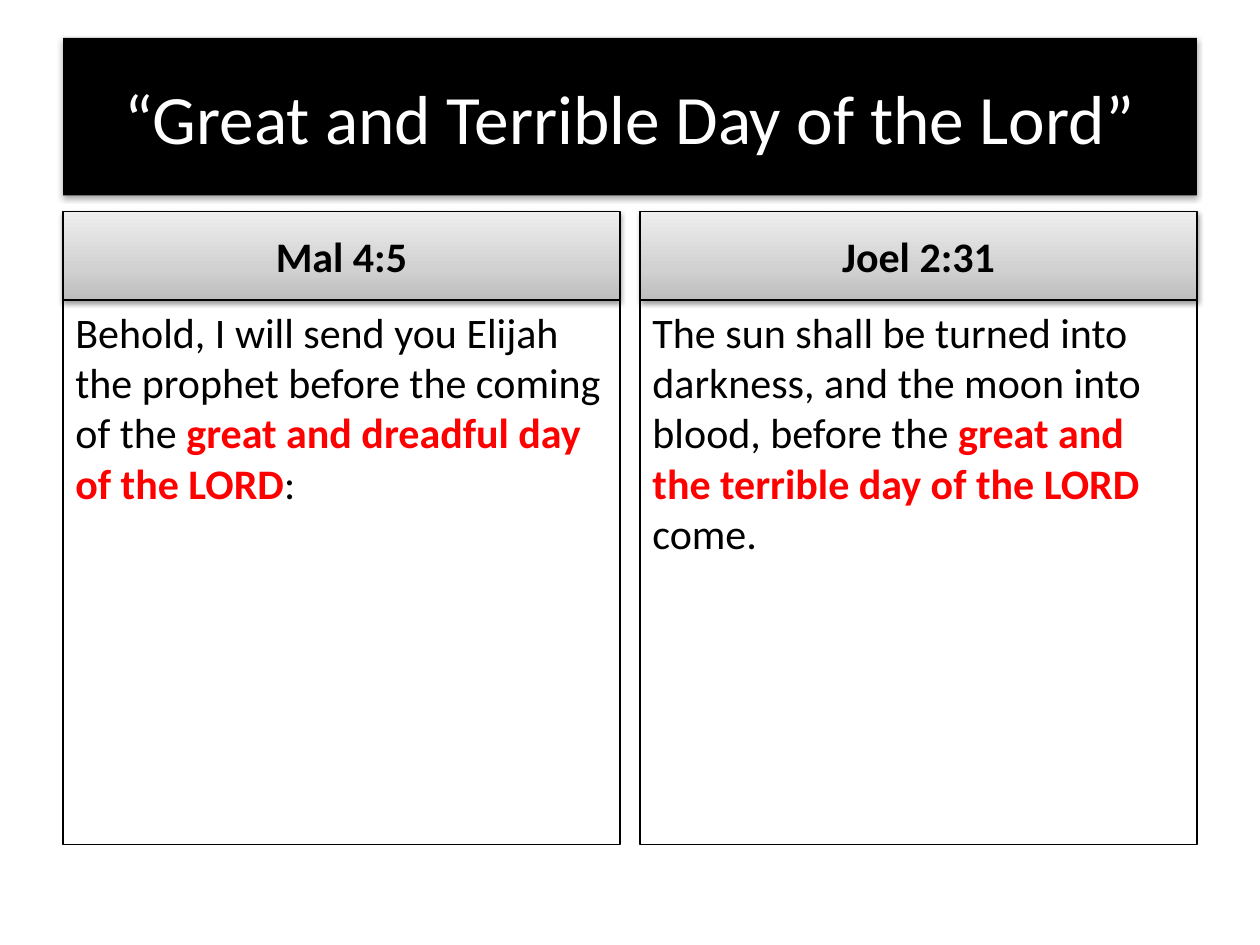
from lxml import etree
from pptx import Presentation
from pptx import util as u
from pptx.dml.color import RGBColor
from pptx.enum import shapes, text
from pptx.oxml.ns import qn

BLACK, WHITE, RED = "000000", "FFFFFF", "FF0000"
HEADER_STOPS = [(0, "BDBDBD"), (35, "D1D1D1"), (100, "EEEEEE")]


def color(value):
    return RGBColor.from_string(value)


def add_color(parent, value):
    return etree.SubElement(parent, qn("a:srgbClr"), val=value)


class ComparisonSlide:
    font = "Calibri"
    body_size = 24
    title_size = 39.6

    def __init__(self, deck):
        self.slide = deck.slides.add_slide(deck.slide_layouts[5])

    def place(self, shape, left, top, width, height):
        shape.left, shape.top = u.Inches(left), u.Inches(top)
        shape.width, shape.height = u.Inches(width), u.Inches(height)

    def set_text(self, shape, spans, size, align, anchor):
        """Fill a shape with one paragraph of (text, colour, bold) spans."""
        frame = shape.text_frame
        frame.word_wrap = True
        frame.auto_size = text.MSO_AUTO_SIZE.NONE
        frame.vertical_anchor = anchor
        para = frame.paragraphs[0]
        para.alignment = align
        para.font.name, para.font.size = self.font, u.Pt(size)
        for words, ink, bold in spans:
            span = para.add_run()
            span.text = words
            span.font.color.rgb = color(ink)
            span.font.bold = bold

    def shade(self, shape, opacity, distance):
        """Cast a soft black shadow straight down."""
        shape.shadow.inherit = False
        effects = shape._element.spPr.find(qn("a:effectLst"))
        shadow = etree.SubElement(
            effects, qn("a:outerShdw"), blurRad=str(u.Pt(3.1)),
            dist=str(u.Pt(distance)), dir="5400000", rotWithShape="0")
        etree.SubElement(add_color(shadow, BLACK), qn("a:alpha"), val=str(opacity * 1000))

    def title(self, words, *area):
        title = self.slide.shapes.title
        self.place(title, *area)
        title.fill.solid()
        title.fill.fore_color.rgb = color(BLACK)
        self.shade(title, 35, 1.8)
        self.set_text(title, [(words, WHITE, False)], self.title_size,
                      text.PP_ALIGN.CENTER, text.MSO_ANCHOR.MIDDLE)

    def box(self, *area):
        box = self.slide.shapes.add_shape(
            shapes.MSO_SHAPE.RECTANGLE, *(u.Inches(length) for length in area))
        box.shadow.inherit = False
        box.fill.background()
        box.line.color.rgb = color(BLACK)
        box.line.width = u.Pt(0.75)
        return box

    def header(self, words, *area):
        box = self.box(*area)
        box.fill.gradient()
        box.fill.gradient_angle = 90
        stops = box._element.spPr.find(qn("a:gradFill")).find(qn("a:gsLst"))
        for stop in list(stops):
            stops.remove(stop)
        for position, value in HEADER_STOPS:
            add_color(etree.SubElement(stops, qn("a:gs"), pos=str(position * 1000)), value)
        self.shade(box, 38, 1.6)
        self.set_text(box, [(words, BLACK, True)], self.body_size,
                      text.PP_ALIGN.CENTER, text.MSO_ANCHOR.MIDDLE)

    def passage(self, spans, *area):
        self.set_text(self.box(*area), spans, self.body_size,
                      text.PP_ALIGN.LEFT, text.MSO_ANCHOR.TOP)


def main():
    deck = Presentation()
    deck.slide_width, deck.slide_height = u.Inches(10), u.Inches(7.5)
    page = ComparisonSlide(deck)

    # Title band
    margin, full_width = 0.5, 9
    page.title("“Great and Terrible Day of the Lord”", margin, 0.3, full_width, 1.25)

    # Two verses side by side: reference, lead-in, key phrase, ending
    verses = [
        ("Mal 4:5",
         "Behold, I will send you Elijah the prophet before the coming of the ",
         "great and dreadful day of the LORD", ":"),
        ("Joel 2:31",
         "The sun shall be turned into darkness, and the moon into blood, before the ",
         "great and the terrible day of the LORD ", "come."),
    ]
    width, top, header_height, passage_height = 4.42, 1.68, 0.7, 4.32
    step = full_width - width
    for column, (reference, lead, phrase, ending) in enumerate(verses):
        left = margin + column * step
        page.header(reference, left, top, width, header_height)
        page.passage([(lead, BLACK, False), (phrase, RED, True), (ending, BLACK, False)],
                     left, top + header_height, width, passage_height)

    deck.save("out.pptx")


if __name__ == "__main__":
    main()
